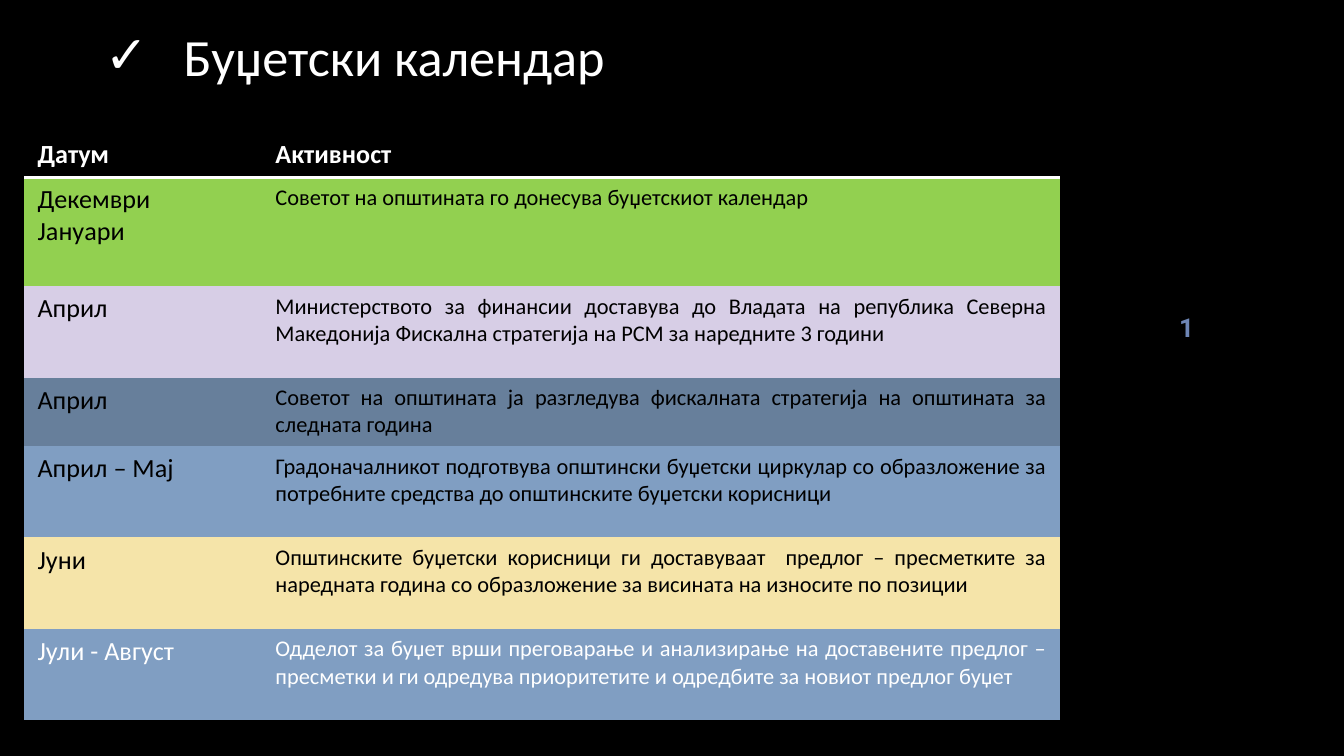
from pptx import Presentation
from pptx.dml.color import RGBColor
from pptx.enum.text import MSO_ANCHOR as Anchor, PP_ALIGN as Align
from pptx.oxml import parse_xml
from pptx.oxml.ns import nsdecls
from pptx.util import Inches, Pt

WHITE, BLACK = "FFFFFF", "000000"
TITLE = " Буџетски календар"
HEAD = ("Датум", "Активност")
# date, activity, fill, text colour, row height
ROWS = [
    ("Декември\nЈануари", "Советот на општината го донесува буџетскиот календар",
     "92D050", BLACK, 0.81),
    ("Април", "Министерството за финансии доставува до Владата на република Северна "
     "Македонија Фискална стратегија на РСМ за наредните 3 години",
     "D7CEE6", BLACK, 0.68),
    ("Април", "Советот на општината ја разгледува фискалната стратегија на општината "
     "за следната година",
     "677F9B", BLACK, 0.51),
    ("Април – Мај", "Градоначалникот подготвува општински буџетски циркулар со "
     "образложение за потребните средства до општинските буџетски корисници",
     "809EC2", BLACK, 0.68),
    ("Јуни", "Општинските буџетски корисници ги доставуваат  предлог – пресметките за "
     "наредната година со образложение за висината на износите по позиции",
     "F5E4A9", BLACK, 0.68),
    ("Јули - Август", "Одделот за буџет врши преговарање и анализирање на доставените "
     "предлог – пресметки и ги одредува приоритетите и одредбите за новиот предлог буџет",
     "809EC2", WHITE, 0.68),
]
COLS = (1.77, 5.94)
HEAD_H = 0.34
SOLID_WHITE = f'<a:solidFill><a:srgbClr val="{WHITE}"/></a:solidFill>'


def rgb(code):
    return RGBColor.from_string(code)


def write(frame, text, size, color, bold=False, align=Align.LEFT, font="Calibri"):
    frame.text = text
    frame.word_wrap = True
    for para in frame.paragraphs:
        para.alignment = align
        for run in para.runs:
            run.font.name = font
            run.font.size = Pt(size)
            run.font.bold = bold
            run.font.color.rgb = rgb(color)


def fill_cell(r, c, text, size, color, fill, **style):
    cell = table.cell(r, c)
    write(cell.text_frame, text, size, color, **style)
    cell.fill.solid()
    cell.fill.fore_color.rgb = rgb(fill)
    # Only the header has a line, along its bottom
    sides = ("lnL", "lnR", "lnB") if r == 1 else ("lnL", "lnR", "lnT", "lnB")
    for i, side in enumerate(sides):
        ruled = r == 0 and side == "lnB"
        width, paint = (Pt(2), SOLID_WHITE) if ruled else (0, "<a:noFill/>")
        cell._tc.get_or_add_tcPr().insert(i, parse_xml(
            f'<a:{side} {nsdecls("a")} w="{width}">{paint}</a:{side}>'))


def add_box(left, top, width, height):
    return slide.shapes.add_textbox(*map(Inches, (left, top, width, height))).text_frame


# Widescreen deck, 16:9
deck = Presentation()
deck.slide_width = Inches(10)
deck.slide_height = Inches(10) * 9 // 16
slide = deck.slides.add_slide(deck.slide_layouts[6])
slide.background.fill.solid()
slide.background.fill.fore_color.rgb = rgb(BLACK)

# Page number
write(add_box(8.06, 2.27, 1.54, 2.95), "1", 14, "6E86B6", True, Align.CENTER, "Roboto")

# Title with a check mark bullet
title = add_box(0.68, 0.08, 8.41, 0.67)
write(title, TITLE, 28, WHITE)
title.vertical_anchor = Anchor.BOTTOM
title.margin_left = title.margin_right = Inches(0.1)
title.margin_top = title.margin_bottom = Inches(0.1)
props = title.paragraphs[0]._p.get_or_add_pPr()
props.set("marL", str(Inches(0.5)))
props.set("indent", str(-Inches(0.5)))
for xml in (f'<a:buClr {nsdecls("a")}><a:srgbClr val="{WHITE}"/></a:buClr>',
            f'<a:buFont {nsdecls("a")} typeface="Calibri"/>',
            f'<a:buChar {nsdecls("a")} char="✓"/>'):
    props.append(parse_xml(xml))

# Calendar table
heights = [HEAD_H] + [row[-1] for row in ROWS]
table = slide.shapes.add_table(
    len(heights), len(COLS), Inches(0.18), Inches(0.98),
    Inches(sum(COLS)), Inches(sum(heights))).table
table.horz_banding = False
for col, width in zip(table.columns, COLS):
    col.width = Inches(width)
for row, height in zip(table.rows, heights):
    row.height = Inches(height)

for c, text in enumerate(HEAD):
    fill_cell(0, c, text, 14, WHITE, BLACK, bold=True)
for r, (date, task, fill, color, _) in enumerate(ROWS, 1):
    fill_cell(r, 0, date, 14, color, fill)
    fill_cell(r, 1, task, 12, color, fill, align=Align.JUSTIFY)

deck.save("out.pptx")
